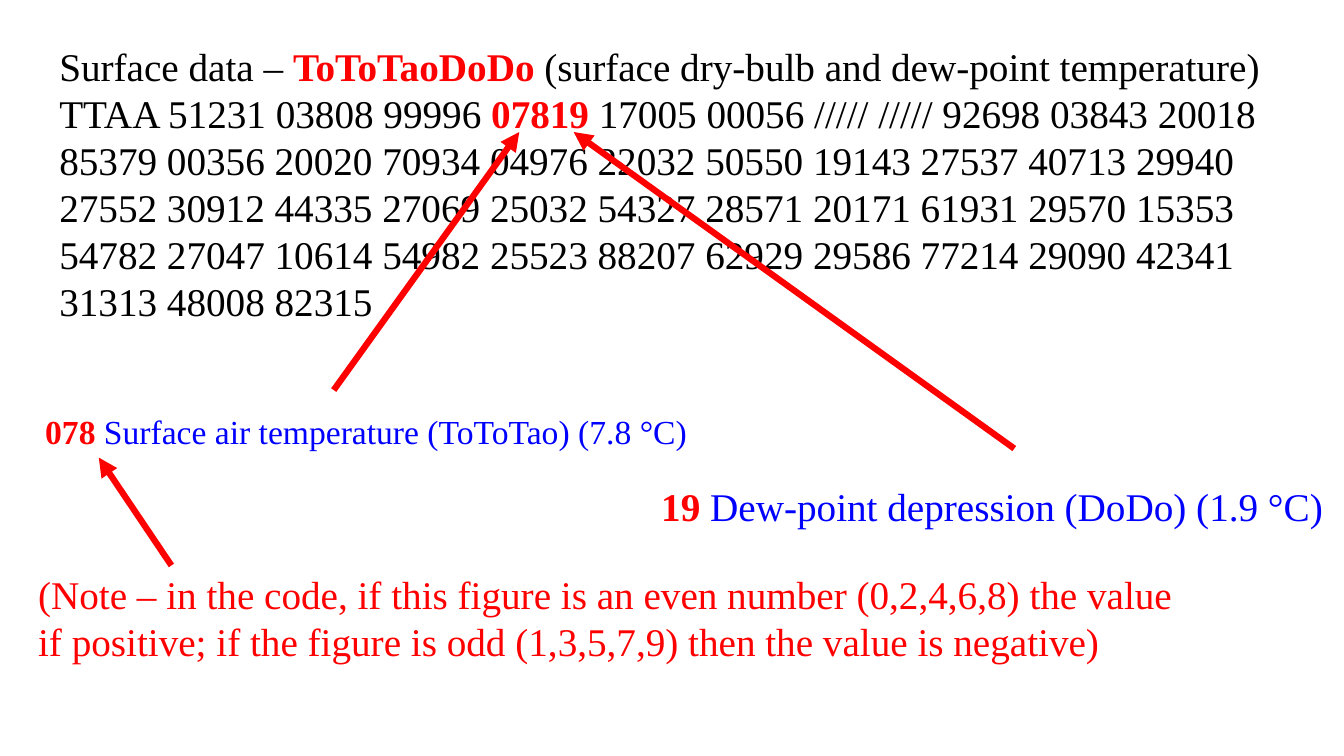
import pptx
import pptx.dml.color
import pptx.enum.shapes
import pptx.enum.text
import pptx.oxml
import pptx.oxml.ns
import pptx.util

COLORS = {"text": "000000", "code": "FF0000", "meaning": "0000FF", "background": "FFFFFF"}
FONT = "Times New Roman"
WIDTH, HEIGHT = 13.33, 7.5

REPORT = (
    " 17005 00056 ///// ///// 92698 03843 20018 85379 00356 20020 70934 04976 "
    "22032 50550 19143 27537 40713 29940 27552 30912 44335 27069 25032 54327 "
    "28571 20171 61931 29570 15353 54782 27047 10614 54982 25523 88207 62929 "
    "29586 77214 29090 42341 31313 48008 82315"
)
NOTE = (
    "(Note – in the code, if this figure is an even number (0,2,4,6,8) the value",
    "if positive; if the figure is odd (1,3,5,7,9) then the value is negative)",
)


def color(name):
    return pptx.dml.color.RGBColor.from_string(COLORS[name])


def add_run(paragraph, text, size=28, fill="text", bold=False):
    run = paragraph.add_run()
    run.text = text
    run.font.name = FONT
    run.font.size = pptx.util.Pt(size)
    run.font.bold = bold
    run.font.color.rgb = color(fill)


def add_text_frame(slide, box):
    shape = slide.shapes.add_textbox(*(pptx.util.Inches(length) for length in box))
    frame = shape.text_frame
    frame.word_wrap = True
    frame.auto_size = pptx.enum.text.MSO_AUTO_SIZE.SHAPE_TO_FIT_TEXT
    return frame


def add_arrow(slide, start, end):
    connector = slide.shapes.add_connector(
        pptx.enum.shapes.MSO_CONNECTOR.STRAIGHT,
        *(pptx.util.Inches(length) for length in (*start, *end)),
    )
    connector.line.color.rgb = color("code")
    connector.line.width = pptx.util.Pt(4.5)
    properties = connector._element.spPr
    line = properties.find(pptx.oxml.ns.qn("a:ln"))
    namespace = pptx.oxml.ns.nsdecls("a")
    line.append(pptx.oxml.parse_xml(f'<a:tailEnd {namespace} type="triangle"/>'))
    properties.append(pptx.oxml.parse_xml(f"<a:effectLst {namespace}/>"))


def add_report(slide, box):
    frame = add_text_frame(slide, box)
    heading = frame.paragraphs[0]
    add_run(heading, "Surface data – ")
    add_run(heading, "ToToTaoDoDo", fill="code", bold=True)
    add_run(heading, " (surface dry-bulb and dew-point temperature)")
    message = frame.add_paragraph()
    add_run(message, "TTAA 51231 03808 99996 ")
    add_run(message, "07819", fill="code", bold=True)
    add_run(message, REPORT)


def add_decoding(slide, box, code, meaning, size, arrow_start, arrow_end):
    paragraph = add_text_frame(slide, box).paragraphs[0]
    add_run(paragraph, code, size=size, fill="code", bold=True)
    add_run(paragraph, meaning, size=size, fill="meaning")
    left, top = box[:2]
    start = (left + arrow_start[0], top + arrow_start[1])
    add_arrow(slide, start, arrow_end)


def add_note(slide, box, arrow_end):
    paragraph = add_text_frame(slide, box).paragraphs[0]
    add_run(paragraph, NOTE[0], fill="code")
    paragraph.add_line_break()
    add_run(paragraph, NOTE[1], fill="code")
    left, top = box[:2]
    add_arrow(slide, (left + 1.42, top), arrow_end)


def main():
    presentation = pptx.Presentation()
    presentation.slide_width = pptx.util.Inches(WIDTH)
    presentation.slide_height = pptx.util.Inches(HEIGHT)
    slide = presentation.slides.add_slide(presentation.slide_layouts[6])
    slide.background.fill.solid()
    slide.background.fill.fore_color.rgb = color("background")

    group_bottom = 1.31
    add_report(slide, (0.49, 0.37, 12.27, 2.93))
    add_decoding(
        slide, (0.35, 4.03, 6.67, 0.5),
        "078", " Surface air temperature (ToToTao) (7.8 °C)", 24,
        arrow_start=(2.96, -0.16), arrow_end=(5.15, group_bottom),
    )
    add_decoding(
        slide, (6.46, 4.74, 6.82, 0.57),
        "19 ", "Dew-point depression (DoDo) (1.9 °C)", 28,
        arrow_start=(3.6, -0.29), arrow_end=(5.69, group_bottom),
    )
    add_note(slide, (0.28, 5.61, 12.77, 1.04), arrow_end=(0.98, 4.54))
    presentation.save("out.pptx")


if __name__ == "__main__":
    main()
